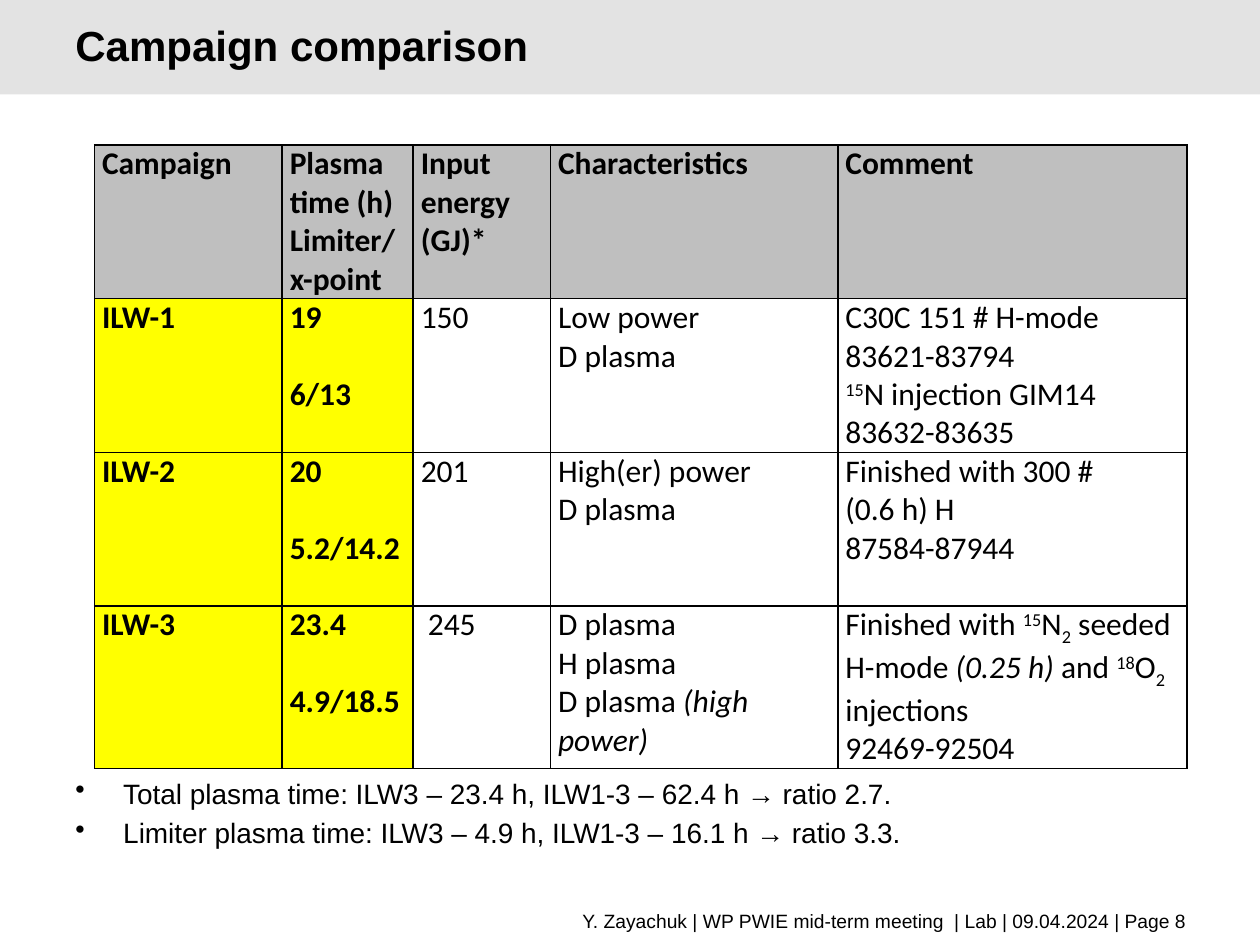
from lxml import etree
from pptx import Presentation
from pptx.dml.color import RGBColor
from pptx.enum.shapes import MSO_SHAPE
from pptx.enum.text import MSO_ANCHOR, PP_ALIGN
from pptx.oxml.ns import qn
from pptx.util import Inches, Pt

RECT = MSO_SHAPE.RECTANGLE
MIDDLE, TOP = MSO_ANCHOR.MIDDLE, MSO_ANCHOR.TOP
LEFT, RIGHT = PP_ALIGN.LEFT, PP_ALIGN.RIGHT

COLORS = {
    "band": "E3E3E3",
    "head": "BFBFBF",
    "mark": "FFFF00",
    "ink": "000000",
}

# Each cell is a list of paragraphs; a paragraph is text or (text, style) runs
HEAD = [["Campaign"], ["Plasma time (h)", "Limiter/x-point"],
        ["Input energy (GJ)*"], ["Characteristics"], ["Comment"]]
ROWS = [
    [["ILW-1"], ["19", "6/13"], ["150"], ["Low power", "D plasma"],
     ["C30C 151 # H-mode", "83621-83794",
      [("15", "sup"), ("N injection GIM14 83632-83635", "")]]],
    [["ILW-2"], ["20", "5.2/14.2"], ["201"], ["High(er) power", "D plasma"],
     ["Finished with 300 #", "(0.6 h) H", "87584-87944"]],
    [["ILW-3"], ["23.4", "4.9/18.5"], ["\u00a0245"],
     ["D plasma", "H plasma", [("D plasma ", ""), ("(high power)", "italic")]],
     [[("Finished with ", ""), ("15", "sup"), ("N", ""), ("2", "sub"),
       (" seeded H-mode ", ""), ("(0.25 h) ", "italic"), ("and ", ""),
       ("18", "sup"), ("O", ""), ("2", "sub"), (" injections", "")],
      "92469-92504"]],
]
COLS = [1.49, 1.04, 1.09, 2.28, 2.77]
HEIGHTS = [1.22, 1.22, 1.22, 1.29]
SHIFTS = {"sup": "30000", "sub": "-25000"}
POINTS = [
    "Total plasma time: ILW3 – 23.4 h, ILW1-3 – 62.4 h → ratio 2.7.",
    "Limiter plasma time: ILW3 – 4.9 h, ILW1-3 – 16.1 h → ratio 3.3.",
]


def color(name):
    return RGBColor.from_string(COLORS[name])


class Deck:
    font, ink = "Arial", "ink"
    cell_font, cell_size = "Calibri", 18
    gap = 22  # one table line, in points

    def __init__(self, slide):
        self.slide = slide

    def style(self, run, size, bold=False, font=None):
        run.font.name = font or self.font
        run.font.size = Pt(size)
        run.font.bold = bold
        run.font.color.rgb = color(self.ink)

    def band(self, x, y, w, h, fill):
        shape = self.slide.shapes.add_shape(
            RECT, Inches(x), Inches(y), Inches(w), Inches(h))
        shape.shadow.inherit = False
        shape.fill.solid()
        shape.fill.fore_color.rgb = color(fill)
        shape.line.fill.background()

    def text(self, x, y, w, h, lines, size, bold=False, align=LEFT, anchor=MIDDLE):
        box = self.slide.shapes.add_textbox(
            Inches(x), Inches(y), Inches(w), Inches(h))
        frame = box.text_frame
        frame.word_wrap = True
        frame.vertical_anchor = anchor
        frame.text = "\n".join(lines)
        for para in frame.paragraphs:
            para.alignment = align
            for run in para.runs:
                self.style(run, size, bold)
        return frame

    def bullets(self, x, y, w, h, lines, size):
        frame = self.text(x, y, w, h, lines, size, anchor=TOP)
        for i, para in enumerate(frame.paragraphs):
            props = para._p.get_or_add_pPr()
            props.set("marL", str(Inches(0.38)))
            props.set("indent", str(Inches(-0.38)))
            etree.SubElement(props, qn("a:buChar")).set("char", "•")
            if i:
                para.space_before = Pt(3.5)

    def border(self, cell):
        props = cell._tc.get_or_add_tcPr()
        for i, side in enumerate(("lnL", "lnR", "lnT", "lnB")):
            line = etree.Element(qn("a:" + side), w=str(Pt(1)))
            fill = etree.SubElement(line, qn("a:solidFill"))
            etree.SubElement(fill, qn("a:srgbClr")).set("val", COLORS[self.ink])
            props.insert(i, line)

    def cell(self, cell, paras, bold, fill, split):
        cell.margin_left = cell.margin_right = Inches(0.06)
        cell.margin_top = cell.margin_bottom = 0
        cell.vertical_anchor = TOP
        if fill:
            cell.fill.solid()
            cell.fill.fore_color.rgb = color(fill)
        else:
            cell.fill.background()
        self.border(cell)
        for i, runs in enumerate(paras):
            frame = cell.text_frame
            para = frame.add_paragraph() if i else frame.paragraphs[0]
            if i and split:
                para.space_before = Pt(self.gap)
            if isinstance(runs, str):
                runs = [(runs, "")]
            for words, kind in runs:
                run = para.add_run()
                run.text = words
                self.style(run, self.cell_size, bold, self.cell_font)
                if kind == "italic":
                    run.font.italic = True
                elif kind:
                    run._r.get_or_add_rPr().set("baseline", SHIFTS[kind])

    def table(self, x, y, cols, heights, rows):
        table = self.slide.shapes.add_table(
            len(rows), len(cols), Inches(x), Inches(y),
            Inches(sum(cols)), Inches(sum(heights))).table
        table.horz_banding = False
        table.first_row = False
        for col, width in zip(table.columns, cols):
            col.width = Inches(width)
        for r, row in enumerate(rows):
            table.rows[r].height = Inches(heights[r])
            for c, paras in enumerate(row):
                fill = "head" if r == 0 else "mark" if c < 2 else None
                self.cell(table.cell(r, c), paras, bool(fill), fill,
                          split=r > 0 and c == 1)


def main():
    prs = Presentation()
    prs.slide_width, prs.slide_height = Inches(10), Inches(7.5)
    deck = Deck(prs.slides.add_slide(prs.slide_layouts[6]))

    # Title band
    deck.band(0, 0, 10, 0.75, "band")
    title = deck.text(0.5, 0.08, 8.25, 0.5, ["Campaign comparison"], 24, bold=True)
    title.paragraphs[0].line_spacing = Pt(32)

    # Campaign table
    deck.table(0.75, 1.15, COLS, HEIGHTS, [HEAD] + ROWS)

    # Ratios
    deck.bullets(0.5, 6.11, 9, 0.79, POINTS, 16)

    # Footer
    deck.text(4.08, 7.16, 5.44, 0.29,
              ["Y. Zayachuk | WP PWIE mid-term meeting  | Lab | 09.04.2024 | Page 8"],
              11, align=RIGHT)

    prs.save("out.pptx")


if __name__ == "__main__":
    main()
